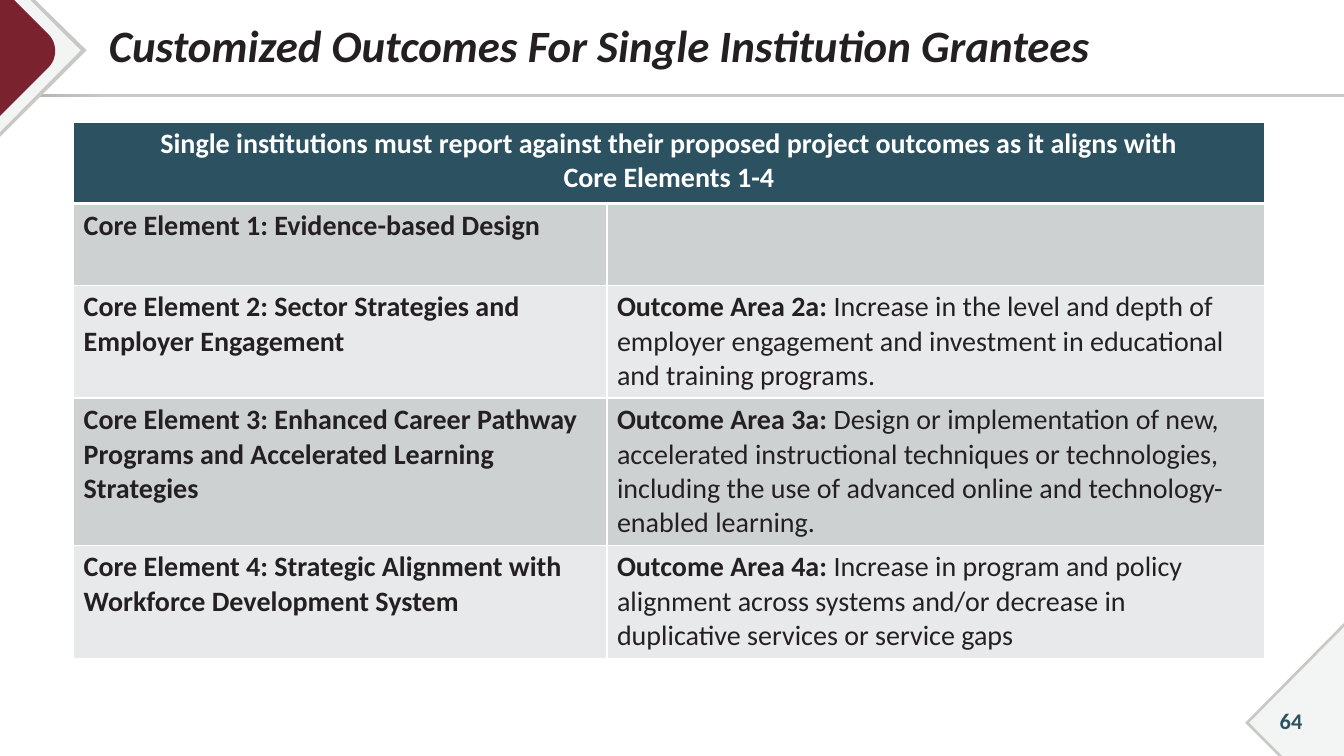
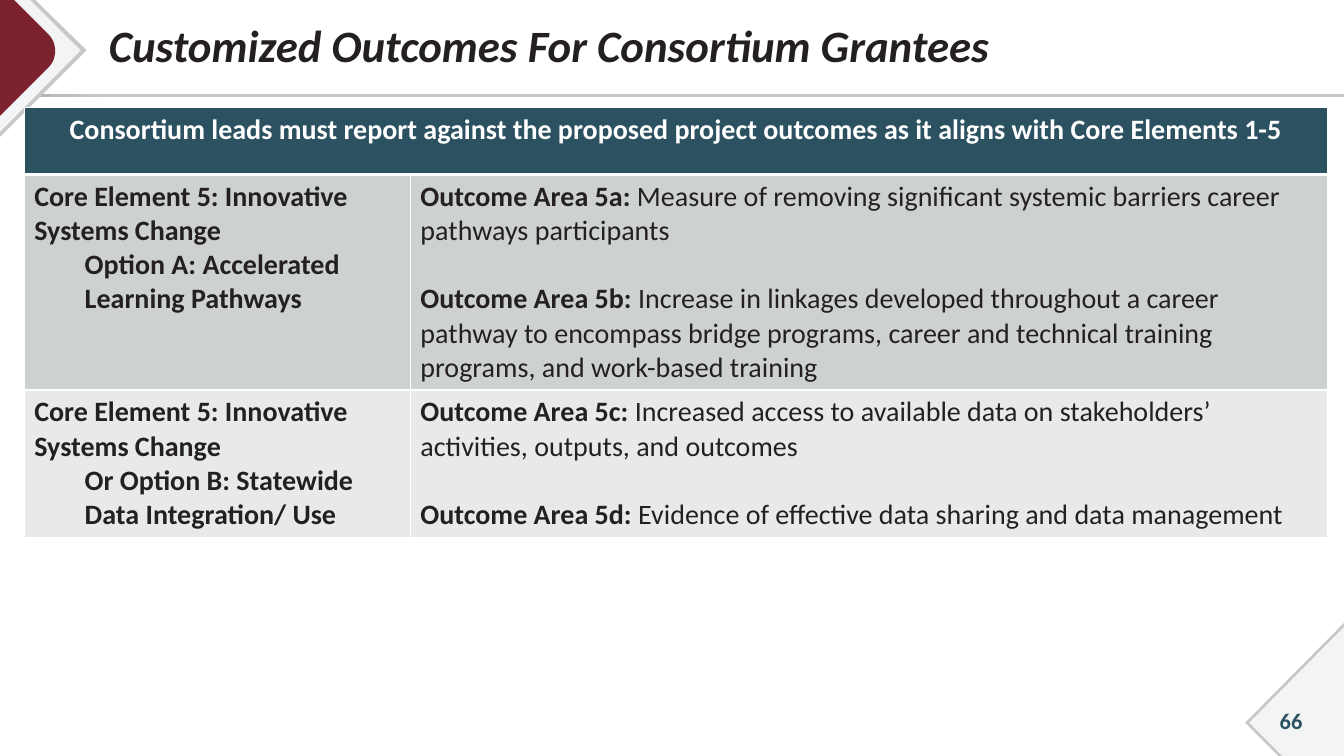
"""Build two table slides on customized outcomes for grantees."""
from lxml.etree import SubElement
from pptx import Presentation
from pptx.dml.color import RGBColor
from pptx.enum.shapes import MSO_SHAPE as Shape
from pptx.enum.text import MSO_ANCHOR as Anchor, PP_ALIGN as Align
from pptx.oxml.ns import qn
from pptx.util import Inches, Pt

WIDTH, HEIGHT = 13.33, 7.5
FONT = "Calibri"
TEAL = RGBColor(0x2C, 0x52, 0x61)
MAROON = RGBColor(0x7A, 0x23, 0x2F)
INK = RGBColor(0x24, 0x20, 0x21)
WHITE = RGBColor(0xFF, 0xFF, 0xFF)
EDGE = RGBColor(0xC8, 0xC8, 0xC6)
EDGE_DARK = RGBColor(0xAB, 0xAB, 0xA8)
PALE = RGBColor(0xF3, 0xF4, 0xF4)
BANDS = [RGBColor(0xCD, 0xD1, 0xD2), RGBColor(0xE8, 0xE9, 0xEA)]

BODY_SIZE = 20
BLANK_LINE = 24.4
THIN, THICK = 1, 3

SLIDES = [
    {
        "title": "Customized Outcomes For Single Institution Grantees",
        "number": 64,
        "origin": (0.73, 1.21),
        "columns": (5.29, 6.52),
        "rows": (0.81, 0.81, 1.12, 1.46, 1.12),
        "header": ["Single institutions must report against their proposed project outcomes as it aligns with",
                   "Core Elements 1-4"],
        "body": [
            ("Core Element 1: Evidence-based Design", None, []),
            ("Core Element 2: Sector Strategies and Employer Engagement", None, [
                ("Outcome Area 2a:", "Increase in the level and depth of employer engagement and "
                 "investment in educational and training programs.")]),
            ("Core Element 3: Enhanced Career Pathway Programs and Accelerated Learning Strategies", None, [
                ("Outcome Area 3a:", "Design or implementation of new, accelerated instructional techniques "
                 "or technologies, including the use of advanced online and technology-enabled learning.")]),
            ("Core Element 4: Strategic Alignment with Workforce Development System", None, [
                ("Outcome Area 4a:", "Increase in program and policy alignment across systems and/or "
                 "decrease in duplicative services or service gaps")]),
        ],
    },
    {
        "title": "Customized Outcomes For Consortium Grantees",
        "number": 66,
        "origin": (0.24, 1.07),
        "columns": (3.83, 9.1),
        "rows": (0.66, 2.14, 1.46),
        "header": ["Consortium leads must report against the proposed project outcomes as it aligns "
                   "with Core Elements 1-5"],
        "body": [
            ("Core Element 5: Innovative Systems Change", "Option A: Accelerated Learning Pathways", [
                ("Outcome Area 5a:", "Measure of removing significant systemic barriers career "
                 "pathways participants"),
                ("Outcome Area 5b:", "Increase in linkages developed throughout a career pathway to encompass "
                 "bridge programs, career and technical training programs, and work-based training")]),
            ("Core Element 5: Innovative Systems Change", "Or Option B: Statewide Data Integration/ Use", [
                ("Outcome Area 5c:", "Increased access to available data on stakeholders’ activities, "
                 "outputs, and outcomes"),
                ("Outcome Area 5d:", "Evidence of effective data sharing and data management")]),
        ],
    },
]


def bezier(start, first, second, end, steps=12):
    """Return points along a cubic curve."""
    return [tuple((1 - t) ** 3 * a + 3 * (1 - t) ** 2 * t * b + 3 * (1 - t) * t ** 2 * c + t ** 3 * d
                  for a, b, c, d in zip(start, first, second, end))
            for t in (step / steps for step in range(steps + 1))]


CORNERS = [
    (EDGE, [(0, 0), (0.35, 0), (0.86, 0.5), (0, 1.36)]),
    (PALE, [(0, 0), (0.3, 0), (0.8, 0.5), (0, 1.31)]),
    (MAROON, [(0, 0), (0.14, 0), *bezier((0.48, 0.34), (0.57, 0.43), (0.57, 0.58), (0.48, 0.67)), (0, 1.15)]),
    (EDGE, [(WIDTH, 6.18), (WIDTH, HEIGHT), (12.68, HEIGHT), (12.35, 7.17)]),
    (PALE, [(WIDTH, 6.22), (WIDTH, HEIGHT), (12.72, HEIGHT), (12.39, 7.17)]),
]


def set_font(paragraph, size, color, bold=None, italic=None):
    font = paragraph.font
    font.name, font.size, font.bold, font.italic = FONT, Pt(size), bold, italic
    font.color.rgb = color


def add_frame(slide):
    """Draw the title rule and the corner shapes."""
    rule = slide.shapes.add_shape(Shape.RECTANGLE, 0, Inches(0.93), Inches(WIDTH), Inches(0.03))
    rule.shadow.inherit = False
    rule.line.fill.background()
    rule.fill.gradient()
    rule.fill.gradient_angle = 0
    for stop, position, color in zip(rule.fill.gradient_stops, (0, 0.08), (EDGE_DARK, EDGE)):
        stop.position, stop.color.rgb = position, color
    for color, points in CORNERS:
        start, *rest = [(Inches(x), Inches(y)) for x, y in points]
        builder = slide.shapes.build_freeform(*start)
        builder.add_line_segments(rest, close=True)
        corner = builder.convert_to_shape()
        corner.shadow.inherit = False
        corner.line.fill.background()
        corner.fill.solid()
        corner.fill.fore_color.rgb = color


def add_label(slide, box, text):
    frame = slide.shapes.add_textbox(*map(Inches, box)).text_frame
    frame.word_wrap, frame.vertical_anchor = True, Anchor.MIDDLE
    frame.text = text
    return frame, frame.paragraphs[0]


def style_cell(cell, fill, top, bottom):
    properties = cell._tc.get_or_add_tcPr()
    for side, width in (("L", THIN), ("R", THIN), ("T", top), ("B", bottom)):
        line = SubElement(properties, qn(f"a:ln{side}"), w=str(Pt(width)))
        SubElement(SubElement(line, qn("a:solidFill")), qn("a:srgbClr"), val=str(WHITE))
    cell.fill.solid()
    cell.fill.fore_color.rgb = fill


def write_cell(cell, lines, color, align=Align.LEFT, gap=0, indents=()):
    """Write lines of (bold lead, plain rest), one paragraph each."""
    frame = cell.text_frame
    for index, (lead, rest) in enumerate(lines or [("", "")]):
        paragraph = frame.add_paragraph() if index else frame.paragraphs[0]
        paragraph.alignment = align
        if index and gap:
            paragraph.space_before = Pt(gap)
        if index in indents:
            properties = paragraph._p.get_or_add_pPr()
            properties.set("marL", str(Inches(0.5)))
            properties.set("indent", "0")
        set_font(paragraph, BODY_SIZE, color)
        for text, bold in ((lead, True), (rest and f" {rest}", False)):
            if text:
                run = paragraph.add_run()
                run.text, run.font.bold = text, bold


def add_outcomes(slide, content):
    columns, rows = content["columns"], content["rows"]
    box = (*content["origin"], sum(columns), sum(rows))
    table = slide.shapes.add_table(len(rows), len(columns), *map(Inches, box)).table
    for column, width in zip(table.columns, columns):
        column.width = Inches(width)
    for index, (row, height) in enumerate(zip(table.rows, rows)):
        row.height = Inches(height)
        fill = BANDS[(index - 1) % 2] if index else TEAL
        for cell in row.cells:
            style_cell(cell, fill, THICK if index == 1 else THIN, THIN if index else THICK)
    header = table.cell(0, 0)
    header.merge(table.cell(0, 1))
    write_cell(header, [(line, "") for line in content["header"]], WHITE, Align.CENTER)
    for index, (element, option, outcomes) in enumerate(content["body"], 1):
        names = [(name, "") for name in (element, option) if name]
        write_cell(table.cell(index, 0), names, INK, indents=(1,))
        write_cell(table.cell(index, 1), outcomes, INK, gap=BLANK_LINE)


def add_slide(presentation, content):
    slide = presentation.slides.add_slide(presentation.slide_layouts[6])
    add_frame(slide)
    _, number = add_label(slide, (12.45, 6.95, 0.71, 0.4), str(content["number"]))
    number.alignment = Align.CENTER
    set_font(number, 16, TEAL, bold=True)
    frame, title = add_label(slide, (0.88, 0.05, 12.12, 0.86), content["title"])
    frame.margin_left = Inches(0.2)
    title.line_spacing = 0.9
    set_font(title, 32, INK, bold=True, italic=True)
    add_outcomes(slide, content)


def main():
    presentation = Presentation()
    presentation.slide_width, presentation.slide_height = Inches(WIDTH), Inches(HEIGHT)
    for content in SLIDES:
        add_slide(presentation, content)
    presentation.save("out.pptx")


if __name__ == "__main__":
    main()
